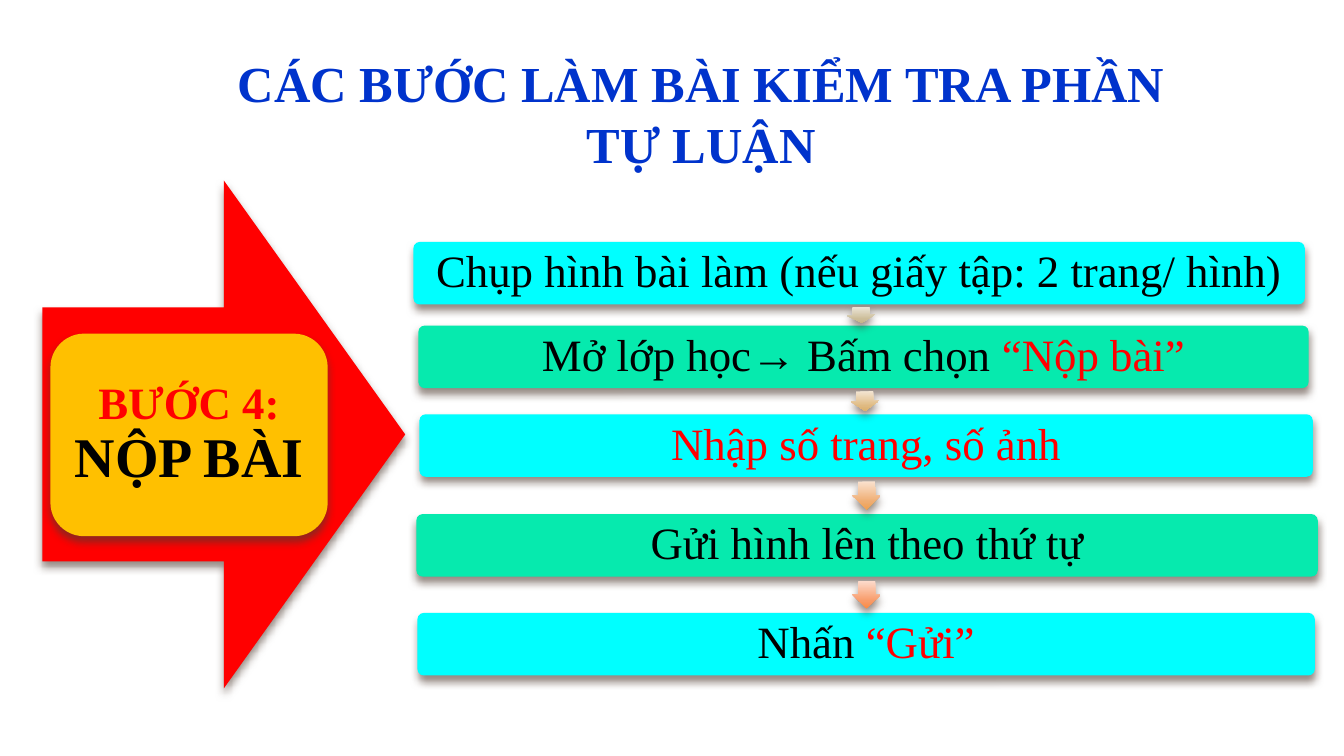
import math
from dataclasses import dataclass
from itertools import pairwise

import lxml.etree
import pptx
import pptx.dml.color
import pptx.enum.shapes
import pptx.enum.text
import pptx.oxml
import pptx.oxml.ns
import pptx.util

WIDTH, HEIGHT = 13.33, 7.5
FONT = "Times New Roman"
BLACK, RED, BLUE = "000000", "FF0000", "0033CC"
CYAN, GREEN, AMBER = "00FFFF", "06EAAE", "FFC000"
SHAPES = pptx.enum.shapes.MSO_SHAPE
NAMESPACE = pptx.oxml.ns.nsdecls("a")


@dataclass
class Area:
    """A rectangle in percent of the slide's width and height."""
    left: float
    top: float
    width: float
    height: float

    @property
    def center(self) -> tuple[float, float]:
        return self.left + self.width / 2, self.top + self.height / 2

    def lengths(self) -> list[int]:
        across, down = WIDTH / 100, HEIGHT / 100
        shares = (self.left * across, self.top * down,
                  self.width * across, self.height * down)
        return [pptx.util.Inches(share) for share in shares]


@dataclass
class Span:
    text: str
    color: str = BLACK
    size: int = 32
    bold: bool = False


@dataclass
class Step:
    left: float
    top: float
    width: float
    fill: str
    spans: list[Span]

    @property
    def area(self) -> Area:
        return Area(self.left, self.top, self.width, 8.27)


STEPS = [
    Step(30.76, 32, 66.32, CYAN, [Span("Chụp hình bài làm (nếu giấy tập: 2 trang/ hình)")]),
    Step(31.13, 43.07, 66.24, GREEN, [Span("Mở lớp học→ Bấm chọn "), Span("“Nộp bài”", RED)]),
    Step(31.21, 54.8, 66.47, CYAN, [Span("Nhập số trang, số ảnh", RED)]),
    Step(30.98, 68, 67.07, GREEN, [Span("Gửi hình lên theo thứ tự")]),
    Step(31.06, 81.07, 66.77, CYAN, [Span("Nhấn "), Span("“Gửi”", RED)]),
]
ARROW_COLORS = [
    ("EDE8DC", "CCBD99", "C4B284"),
    ("F4E6D4", "DFBA82", "DCAF67"),
    ("FAE2CF", "EFAD72", "F0A050"),
    ("FDDBCC", "F89B69", "FC8A43"),
]


def rgb(color: str) -> pptx.dml.color.RGBColor:
    return pptx.dml.color.RGBColor.from_string(color)


def add_shadow(shape) -> None:
    shape.shadow.inherit = False
    effects = shape._element.spPr.find(pptx.oxml.ns.qn("a:effectLst"))
    effects.append(pptx.oxml.parse_xml(
        f'<a:outerShdw {NAMESPACE} blurRad="{pptx.util.Pt(6)}" dist="{pptx.util.Pt(4)}" '
        'dir="5400000" rotWithShape="0"><a:srgbClr val="4E3B30">'
        '<a:alpha val="60000"/></a:srgbClr></a:outerShdw>'))


def add_box(page, kind, area: Area, fill: str):
    box = page.shapes.add_shape(kind, *area.lengths())
    box.fill.solid()
    box.fill.fore_color.rgb = rgb(fill)
    box.line.fill.background()
    add_shadow(box)
    return box


def write(box, spans: list[Span], spacing: float = 0.9) -> None:
    frame = box.text_frame
    frame.word_wrap = True
    para = frame.paragraphs[0]
    para.alignment = pptx.enum.text.PP_ALIGN.CENTER
    para.line_spacing = spacing
    for span in spans:
        run = para.add_run()
        run.text = span.text
        run.font.name = FONT
        run.font.size = pptx.util.Pt(span.size)
        run.font.bold = span.bold
        run.font.color.rgb = rgb(span.color)


def write_centered(box, spans: list[Span]) -> None:
    frame = box.text_frame
    frame.vertical_anchor = pptx.enum.text.MSO_ANCHOR.MIDDLE
    frame.margin_left = frame.margin_right = pptx.util.Inches(0.1)
    frame.margin_top = frame.margin_bottom = 0
    write(box, spans)


def add_step_arrow(page, upper: Area, lower: Area, colors: tuple[str, ...]) -> None:
    """Point from one bar to the next, filling three quarters of the gap."""
    (x1, y1), (x2, y2) = upper.center, lower.center
    gap = lower.top - upper.top - upper.height
    width, height = 0.75 * gap * HEIGHT / WIDTH, 3.73
    area = Area((x1 + x2 - width) / 2, (y1 + y2 - height) / 2, width, height)
    arrow = add_box(page, SHAPES.RIGHT_ARROW, area, colors[0])
    arrow.adjustments[0] = 0.6
    arrow.rotation = math.degrees(math.atan2((y2 - y1) * HEIGHT, (x2 - x1) * WIDTH))
    stops = "".join(f'<a:gs pos="{place}000"><a:srgbClr val="{color}"/></a:gs>'
                    for place, color in zip((0, 72, 100), colors))
    solid = arrow._element.spPr.find(pptx.oxml.ns.qn("a:solidFill"))
    solid.getparent().replace(solid, pptx.oxml.parse_xml(
        f'<a:gradFill {NAMESPACE} rotWithShape="0"><a:gsLst>{stops}</a:gsLst>'
        '<a:lin ang="5400000" scaled="0"/></a:gradFill>'))


def main() -> None:
    deck = pptx.Presentation()
    deck.slide_width = pptx.util.Inches(WIDTH)
    deck.slide_height = pptx.util.Inches(HEIGHT)
    page = deck.slides.add_slide(deck.slide_layouts[6])

    # Large arrow with the step's name
    add_box(page, SHAPES.RIGHT_ARROW, Area(3.15, 23.87, 27, 67.2), RED)
    badge = add_box(page, SHAPES.ROUNDED_RECTANGLE, Area(3.75, 44.13, 20.63, 26.8), AMBER)
    write_centered(badge, [Span("BƯỚC 4: ", RED, 32, True), Span("NỘP BÀI", BLACK, 40, True)])

    # Title
    title = page.shapes.add_textbox(*Area(16.65, 6.27, 71.04, 17.47).lengths())
    write(title, [Span("CÁC BƯỚC LÀM BÀI KIỂM TRA PHẦN TỰ LUẬN", BLUE, 36, True)], 1.0)

    # Bars, then the arrows between them
    for step in STEPS:
        bar = add_box(page, SHAPES.ROUNDED_RECTANGLE, step.area, step.fill)
        bar.adjustments[0] = 0.1
        write_centered(bar, step.spans)
    for (upper, lower), colors in zip(pairwise(STEPS), ARROW_COLORS):
        add_step_arrow(page, upper.area, lower.area, colors)

    deck.save("out.pptx")


if __name__ == "__main__":
    main()
